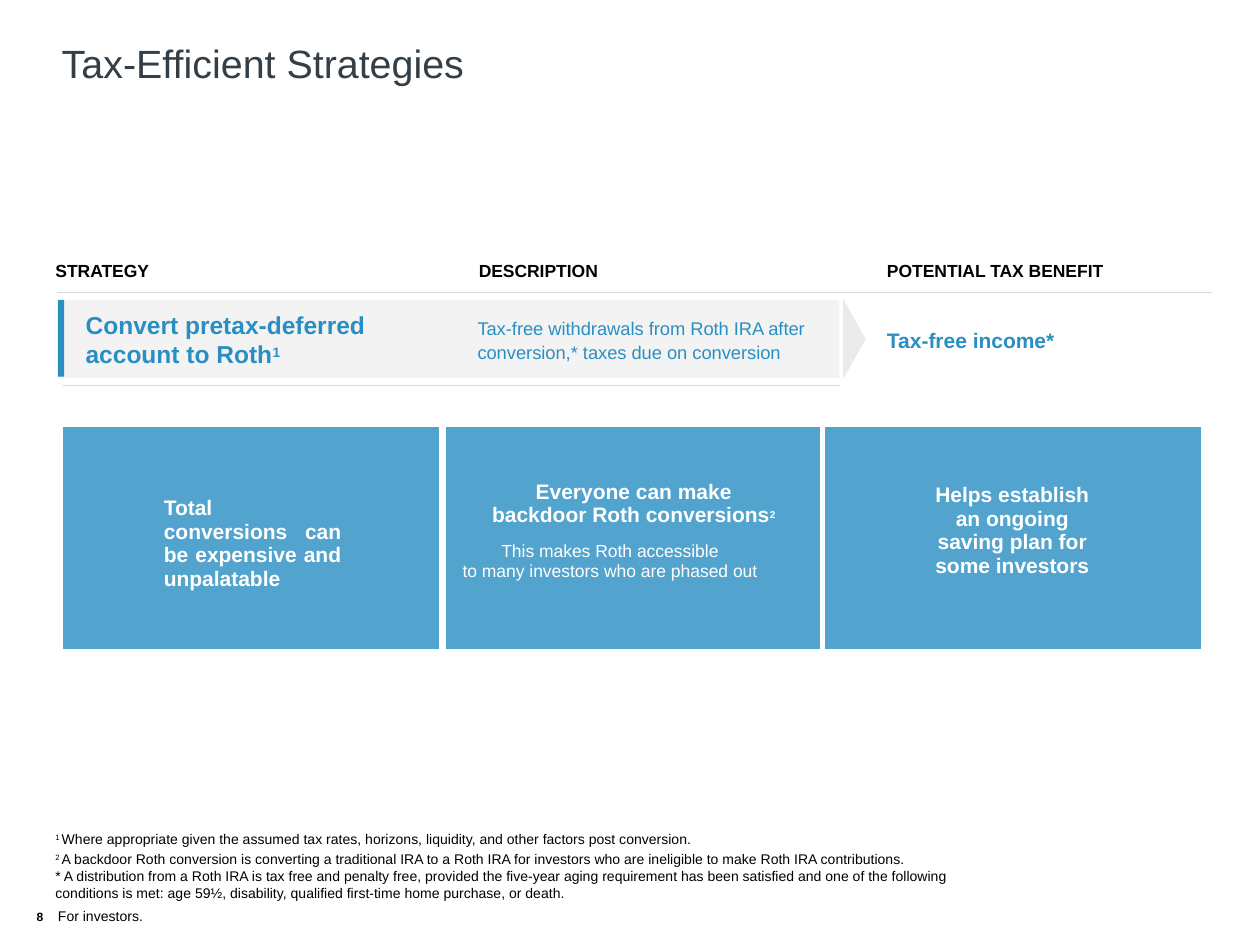
from lxml import etree
from pptx import Presentation
from pptx.dml.color import RGBColor
from pptx.enum import shapes as shp, text as txt
from pptx.oxml.ns import qn
from pptx.util import Inches, Pt

COLORS = {"title": "333E47", "black": "000000", "accent": "298FC2", "white": "FFFFFF",
          "cell": "52A4CE", "band": "F1F1F1", "chevron": "EAEAEA", "rule": "D9D9D9"}
LEFT, CENTER, JUSTIFY = (txt.PP_ALIGN.LEFT, txt.PP_ALIGN.CENTER, txt.PP_ALIGN.JUSTIFY)

# Content: a paragraph is a list of (text, run format); "\v" breaks a line
BASE = dict(color="black", bold=False)
HEADER = dict(size=10, bold=True)
STRATEGY = dict(size=14, bold=True, color="accent")
DETAIL = dict(size=10.5, color="accent")
BENEFIT = dict(size=12, bold=True, color="accent")
POINT = dict(size=12, bold=True, color="white")
NOTE = dict(size=8)
MARK = dict(size=7.5, raised=28)

TITLE = [("Tax-Efficient Strategies", dict(size=22.5, color="title"))]
FOOTNOTES = [
    [("1 ", MARK), ("Where appropriate given the assumed tax rates, horizons, liquidity, "
                    "and other factors post conversion.", NOTE)],
    [("2 ", MARK), ("A backdoor Roth conversion is converting a traditional IRA to a Roth IRA "
                    "for investors who are ineligible to make Roth IRA contributions.", NOTE)],
    [("* A distribution from a Roth IRA is tax free and penalty free, provided the five-year "
      "aging requirement has been satisfied and one of the following\vconditions is met: "
      "age 59½, disability, qualified first-time home purchase, or death.", NOTE)],
]
# Text boxes: (left, top, width, height), inset left, inset top, paragraphs
LABELS = [
    ((0.43, 2.04, 0.78, 0.19), 0.01, 0.02, [[("STRATEGY", HEADER)]]),
    ((3.79, 2.04, 0.97, 0.19), 0.01, 0.02, [[("DESCRIPTION", HEADER)]]),
    ((7.03, 2.04, 1.8, 0.19), 0.01, 0.02, [[("POTENTIAL TAX BENEFIT", HEADER)]]),
    ((0.65, 2.43, 2.3, 0.5), 0.03, 0.03,
     [[("Convert pretax-deferred\vaccount to Roth", STRATEGY),
       ("1", dict(STRATEGY, size=13.5, raised=25))]]),
    ((3.79, 2.49, 2.7, 0.38), 0, 0.01,
     [[("Tax-free withdrawals from Roth IRA after\vconversion,* taxes due on conversion",
        DETAIL)]]),
    ((7.03, 2.58, 1.4, 0.23), 0.01, 0.02, [[("Tax-free income*", BENEFIT)]]),
    ((0.4, 6.51, 7.3, 0.62), 0.04, 0.08, FOOTNOTES),
    ((0.28, 7.13, 0.95, 0.16), 0.01, 0.02,
     [[("8\t", dict(size=12, bold=True, raised=3)), ("For investors.", NOTE)]]),
]
# Table cells: column width, insets (left, top, right), alignment, paragraphs
POINTS = [
    (3.02, (0.81, 0.56, 0.8), JUSTIFY,
     [[("Total conversions can be expensive and unpalatable", POINT)]]),
    (3.02, (0.01, 0.43, 0.37), CENTER,
     [[("Everyone can make\vbackdoor Roth conversions", POINT),
       ("2", dict(POINT, size=9.8, raised=26))],
      [("This makes Roth accessible\vto many investors who are phased out",
        dict(size=10, color="white"))]]),
    (3.01, (0.8, 0.46, 0.8), CENTER,
     [[("Helps establish\van ongoing\vsaving plan for\vsome investors", POINT)]]),
]
DIVIDERS = [4.5, 3]  # white gaps between neighbouring cells, in points
RULES = [(0.45, 2.32, 9.62), (0.5, 3.06, 6.67)]  # left, y, right


def rgb(name):
    return RGBColor.from_string(COLORS[name])


def write_paragraph(paragraph, runs, align=LEFT):
    paragraph.alignment = align
    for content, style in runs:
        style = {**BASE, **style}
        for index, line in enumerate(content.split("\v")):
            if index:
                paragraph.add_line_break()
            run = paragraph.add_run()
            run.text = line
            font_format = dict(name="Arial", size=Pt(style["size"]), bold=style["bold"])
            for key, value in font_format.items():
                setattr(run.font, key, value)
            run.font.color.rgb = rgb(style["color"])
            if "raised" in style:
                run.font._element.set("baseline", str(style["raised"] * 1000))


def write_paragraphs(frame, paragraphs, align=LEFT):
    for index, runs in enumerate(paragraphs):
        paragraph = frame.add_paragraph() if index else frame.paragraphs[0]
        write_paragraph(paragraph, runs, align)
    return frame.paragraphs


def set_frame(frame, left, top):
    values = dict(margin_left=Inches(left), margin_top=Inches(top), margin_right=0,
                  margin_bottom=0, word_wrap=True, vertical_anchor=txt.MSO_ANCHOR.TOP,
                  auto_size=txt.MSO_AUTO_SIZE.NONE)
    for key, value in values.items():
        setattr(frame, key, value)


def paint(shape, color):
    shape.shadow.inherit = False
    shape.fill.solid()
    shape.fill.fore_color.rgb = rgb(color)
    shape.line.fill.background()


def add_divider(cell, side, width):
    line = etree.Element(qn("a:" + side), w=str(Pt(width)))
    fill = etree.SubElement(line, qn("a:solidFill"))
    etree.SubElement(fill, qn("a:srgbClr"), val=COLORS["white"])
    position = 1 if side == "lnR" and cell._tc.tcPr.find(qn("a:lnL")) is not None else 0
    cell._tc.tcPr.insert(position, line)


def main():
    deck = Presentation()
    deck.slide_width, deck.slide_height = Inches(10), Inches(7.5)
    slide = deck.slides.add_slide(deck.slide_layouts[5])

    # Title
    title = slide.shapes.title
    for key, value in dict(left=0.48, top=0.28, width=8.88, height=0.7).items():
        setattr(title, key, Inches(value))
    set_frame(title.text_frame, 0.01, 0.03)
    write_paragraphs(title.text_frame, [TITLE])

    # Strategy band with accent bar and chevron
    for box, color in [((0.46, 2.38, 6.2, 0.62), "band"), ((0.46, 2.38, 0.05, 0.61), "accent")]:
        bar = slide.shapes.add_shape(shp.MSO_SHAPE.RECTANGLE, *map(Inches, box))
        paint(bar, color)
        if color == "band":
            srgb = bar._element.spPr.find(".//" + qn("a:srgbClr"))
            etree.SubElement(srgb, qn("a:alpha"), val="85000")
    outline = slide.shapes.build_freeform(Inches(6.69), Inches(2.37))
    outline.add_line_segments([(Inches(6.69), Inches(3.01)), (Inches(6.87), Inches(2.69))])
    paint(outline.convert_to_shape(), "chevron")

    # Rules
    for left, y, right in RULES:
        rule = slide.shapes.add_connector(shp.MSO_CONNECTOR.STRAIGHT, Inches(left), Inches(y),
                                          Inches(right), Inches(y))
        rule.line.color.rgb = rgb("rule")
        rule.line.width = Pt(0.75)
        etree.SubElement(rule._element.spPr, qn("a:effectLst"))

    # Labels, footnotes and footer
    for box, left, top, paragraphs in LABELS:
        label = slide.shapes.add_textbox(*map(Inches, box))
        set_frame(label.text_frame, left, top)
        written = write_paragraphs(label.text_frame, paragraphs)
        if paragraphs is FOOTNOTES:
            written[1].space_before = Pt(2)
        elif "\t" in paragraphs[0][0][0]:
            tabs = etree.SubElement(written[0]._p.get_or_add_pPr(), qn("a:tabLst"))
            etree.SubElement(tabs, qn("a:tab"), pos=str(Inches(0.17)), algn="l")
        elif paragraphs[0][0][1] is DETAIL:
            written[0].line_spacing = 1.1

    # Table of key points
    total = sum(point[0] for point in POINTS)
    table = slide.shapes.add_table(1, len(POINTS), Inches(0.49), Inches(3.38),
                                   Inches(total), Inches(1.78)).table
    table.first_row = table.horz_banding = False
    table.rows[0].height = Inches(1.78)
    for index, (width, (left, top, right), align, paragraphs) in enumerate(POINTS):
        table.columns[index].width = Inches(width)
        cell = table.cell(0, index)
        values = dict(margin_left=left, margin_top=top, margin_right=right, margin_bottom=0)
        for key, value in values.items():
            setattr(cell, key, Inches(value))
        cell.vertical_anchor = txt.MSO_ANCHOR.TOP
        cell.fill.solid()
        cell.fill.fore_color.rgb = rgb("cell")
        written = write_paragraphs(cell.text_frame, paragraphs, align)
        if len(written) > 1:
            written[0]._p.get_or_add_pPr().set("marL", str(Inches(0.38)))
            written[1].space_before = Pt(8.5)
        if index:
            add_divider(cell, "lnL", DIVIDERS[index - 1])
        if index < len(DIVIDERS):
            add_divider(cell, "lnR", DIVIDERS[index])

    deck.save("out.pptx")


if __name__ == "__main__":
    main()
